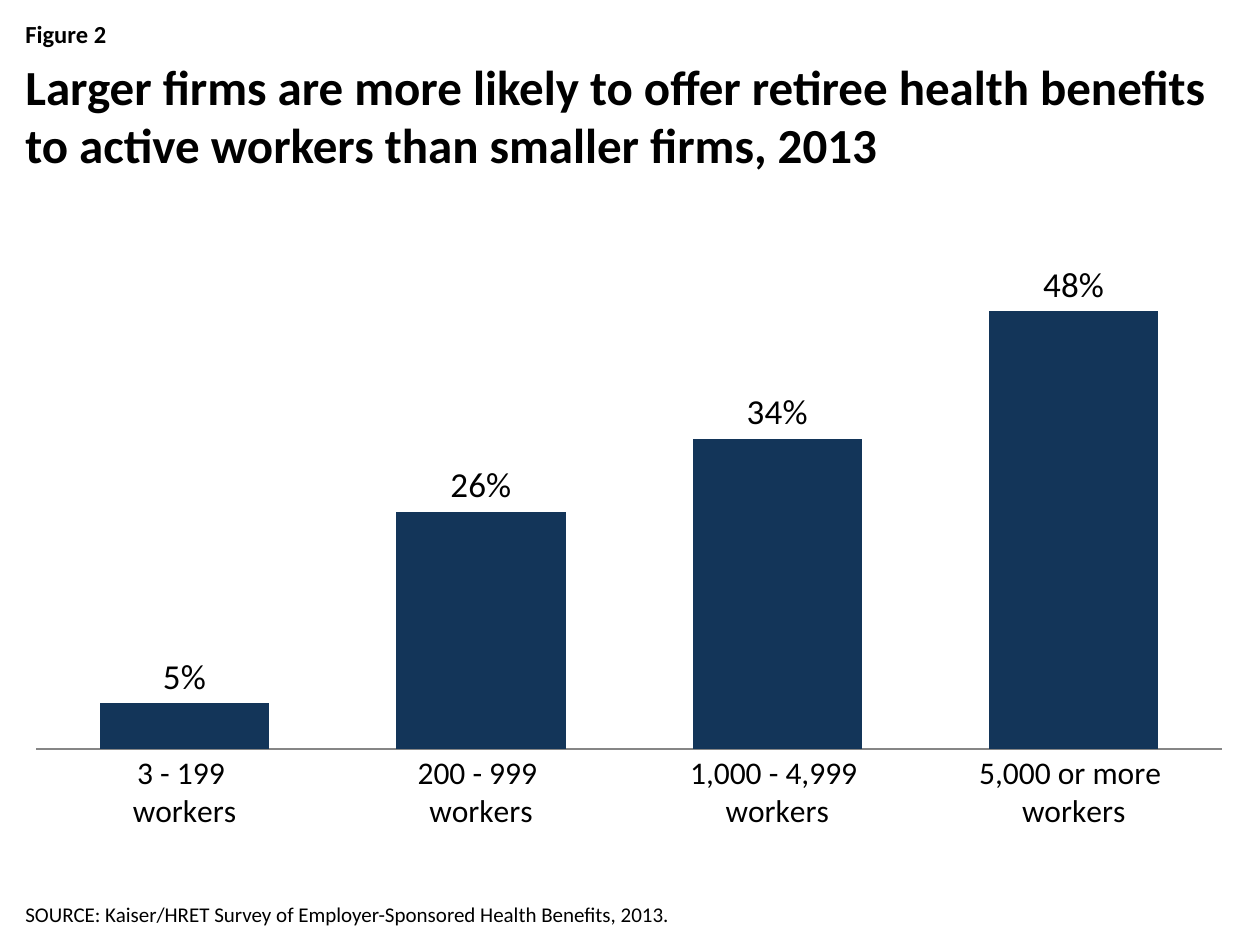
"""Build the slide on retiree health benefits by firm size."""
from lxml import etree
from pptx import Presentation
from pptx import util as u
from pptx.chart.data import CategoryChartData
from pptx.dml.color import RGBColor
from pptx.enum import chart as ch, text
from pptx.oxml import parse_xml
from pptx.oxml.ns import nsdecls

PX = 914400 / 126
FONT, BLACK, NAVY, GREY = "Calibri", "000000", "133559", "868686"
TOP, BOTTOM = text.MSO_ANCHOR.TOP, text.MSO_ANCHOR.BOTTOM

TEXTS = [
    ("Figure 2", (13, 13, 1235, 43), 14, True, TOP),
    ("Larger firms are more likely to offer retiree health benefits "
     "to active workers than smaller firms, 2013", (13, 50, 1235, 126), 28, True, TOP),
    ("SOURCE: Kaiser/HRET Survey of Employer-Sponsored Health Benefits, 2013.",
     (13, 857, 1147, 76), 12, False, BOTTOM),
]
OFFER_RATES = {
    "3 - 199 \nworkers": 0.05,
    "200 - 999 \nworkers": 0.26,
    "1,000 - 4,999 \nworkers": 0.34,
    "5,000 or more \nworkers": 0.48,
}
CHART_BOX = (13, 189, 1235, 655)
PLOT_BOX = (37, 202, 1186, 547)


def px(box):
    return [u.Emu(round(n * PX)) for n in box]


def color(hex_value):
    return RGBColor.from_string(hex_value)


def style(font, size, bold=False):
    font.name, font.size, font.bold = FONT, u.Pt(size), bold
    font.color.rgb = color(BLACK)


def add_text(slide, words, box, size, bold, anchor):
    frame = slide.shapes.add_textbox(*px(box)).text_frame
    frame.word_wrap = True
    frame.vertical_anchor = anchor
    frame.text = words
    style(frame.paragraphs[0].font, size, bold)


def place_plot(chart):
    left, top, width, height = CHART_BOX
    x, y, w, h = PLOT_BOX
    parts = {"x": (x - left) / width, "y": (y - top) / height,
             "w": w / width, "h": h / height}
    layout = parse_xml(
        f'<c:layout {nsdecls("c")}><c:manualLayout><c:layoutTarget val="inner"/>'
        '<c:xMode val="edge"/><c:yMode val="edge"/>'
        + "".join(f'<c:{k} val="{v:.3f}"/>' for k, v in parts.items())
        + "</c:manualLayout></c:layout>")
    plot_area = chart.plots[0]._element.getparent()
    for old in plot_area.findall(etree.QName(layout).text):
        plot_area.remove(old)
    plot_area.insert(0, layout)


def add_rates(slide):
    data = CategoryChartData(number_format="0%")
    data.categories = list(OFFER_RATES)
    data.add_series("Series 1", list(OFFER_RATES.values()))
    chart = slide.shapes.add_chart(
        ch.XL_CHART_TYPE.COLUMN_CLUSTERED, *px(CHART_BOX), data).chart
    chart.has_legend = chart.has_title = False
    style(chart.font, 18)

    rates = chart.value_axis
    rates.visible = rates.has_major_gridlines = False
    rates.minimum_scale, rates.maximum_scale = 0, 0.6
    sizes = chart.category_axis
    sizes.major_tick_mark = ch.XL_TICK_MARK.NONE
    sizes.format.line.color.rgb = color(GREY)
    sizes.format.line.width = u.Pt(0.75)

    plot = chart.plots[0]
    plot.gap_width, plot.vary_by_categories = 75, False
    bars = plot.series[0]
    bars.format.fill.solid()
    bars.format.fill.fore_color.rgb = color(NAVY)
    labels = bars.data_labels
    labels.show_value = True
    labels.number_format, labels.number_format_is_linked = "0%", False
    labels.position = ch.XL_LABEL_POSITION.OUTSIDE_END
    style(labels.font, 20)
    place_plot(chart)


def main():
    deck = Presentation()
    deck.slide_width, deck.slide_height = px((1260, 945))
    slide = deck.slides.add_slide(deck.slide_layouts[6])
    add_rates(slide)
    for item in TEXTS:
        add_text(slide, *item)
    deck.save("out.pptx")


if __name__ == "__main__":
    main()
